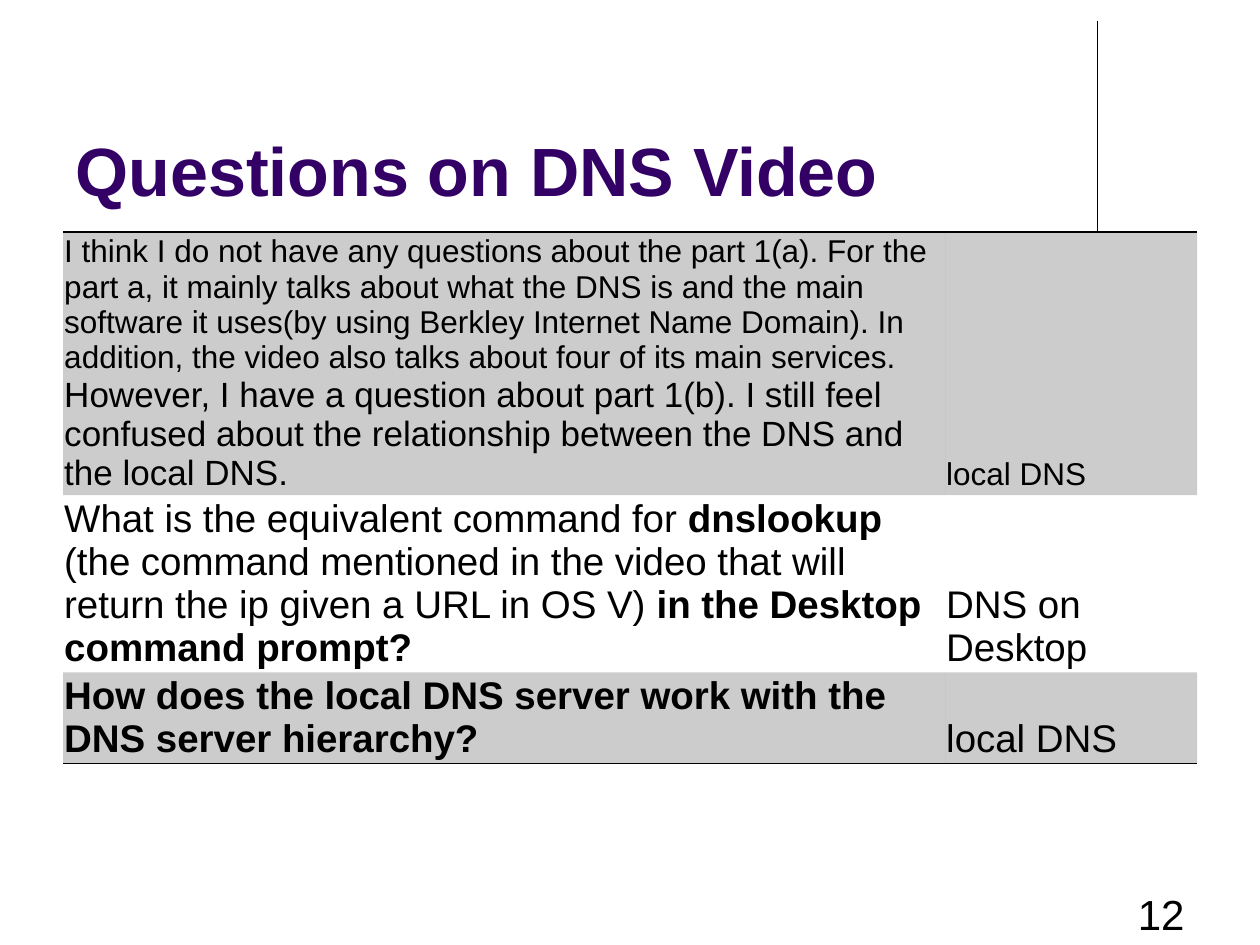
from pptx import Presentation
from pptx.dml.color import RGBColor
from pptx.enum.shapes import MSO_CONNECTOR
from pptx.enum.text import MSO_ANCHOR, PP_ALIGN
from pptx.oxml.ns import qn
from pptx.util import Inches, Pt
from lxml.etree import SubElement, Element

THEME = {
    "font": "Arial", "title": RGBColor(0x33, 0x00, 0x66), "ink": RGBColor(0, 0, 0),
    "title_size": 39, "number_size": 24, "small": 18, "medium": 20, "large": 22,
    "band_alpha": 20, "rule_width": 1,
}

TITLE = "Questions on DNS Video"
PAGE = "12"
# Each cell is a list of runs: (text, size, bold)
ROWS = [
    ([("I think I do not have any questions about the part 1(a). For the part a, it mainly "
       "talks about what the DNS is and the main software it uses(by using Berkley Internet "
       "Name Domain). In addition, the video also talks about four of its main services. ",
       "small", False),
      ("However, I have a question about part 1(b). I still feel confused about the "
       "relationship between the DNS and the local DNS.", "medium", False)],
     [("local DNS", "small", False)]),
    ([("What is the equivalent command for ", "large", False),
      ("dnslookup", "large", True),
      (" (the command mentioned in the video that will return the ip given a URL in OS V) ",
       "large", False),
      ("in the Desktop command prompt?", "large", True)],
     [("DNS on Desktop", "large", False)]),
    ([("How does the local DNS server work with the DNS server hierarchy?", "large", True)],
     [("local DNS", "large", False)]),
]
COL_WIDTHS = [7, 2]
ROW_HEIGHTS = [2.08, 1.4, 0.71]


def style(r, size, color="ink", bold=False):
    r.font.name = THEME["font"]
    r.font.size = Pt(THEME[size])
    r.font.bold = bold
    r.font.color.rgb = THEME[color]


def set_borders(cell, ruled):
    """Draw the edges named in ruled and clear the others."""
    tcPr = cell._tc.get_or_add_tcPr()
    for i, edge in enumerate(("lnL", "lnR", "lnT", "lnB")):
        ln = Element(qn(f"a:{edge}"), w=str(Pt(THEME["rule_width"])))
        if edge in ruled:
            fill = SubElement(ln, qn("a:solidFill"))
            SubElement(fill, qn("a:srgbClr"), val=str(THEME["ink"]))
        else:
            SubElement(ln, qn("a:noFill"))
        tcPr.insert(i, ln)


def fill_band(cell, banded):
    if not banded:
        cell.fill.background()
        return
    cell.fill.solid()
    cell.fill.fore_color.rgb = THEME["ink"]
    color = cell._tc.tcPr.find(".//" + qn("a:srgbClr"))
    SubElement(color, qn("a:alpha"), val=str(THEME["band_alpha"] * 1000))


def add_title(s):
    sp = s.shapes.title
    sp.left, sp.top, sp.width, sp.height = map(Inches, (0.5, 0.3, 8.25, 1.42))
    tf = sp.text_frame
    tf.text = TITLE
    tf.vertical_anchor = MSO_ANCHOR.BOTTOM
    tf.paragraphs[0].alignment = PP_ALIGN.LEFT
    style(tf.paragraphs[0].runs[0], "title_size", "title", True)


def add_rule(s):
    line = s.shapes.add_connector(MSO_CONNECTOR.STRAIGHT, Inches(8.71), Inches(0.17),
                                  Inches(8.71), Inches(1.83))
    line.line.color.rgb = THEME["ink"]
    line.line.width = Pt(0.75)
    SubElement(line._element.spPr, qn("a:effectLst"))


def add_questions(s):
    table = s.shapes.add_table(len(ROWS), len(COL_WIDTHS), Inches(0.5), Inches(1.84),
                               Inches(sum(COL_WIDTHS)), Inches(sum(ROW_HEIGHTS))).table
    table.first_row = table.horz_banding = False
    for col, width in zip(table.columns, COL_WIDTHS):
        col.width = Inches(width)
    last = len(ROWS) - 1
    for i, row in enumerate(ROWS):
        table.rows[i].height = Inches(ROW_HEIGHTS[i])
        ruled = {0: ["lnT"], last: ["lnB"]}.get(i, [])
        for j, runs in enumerate(row):
            cell = table.cell(i, j)
            cell.vertical_anchor = MSO_ANCHOR.BOTTOM
            cell.margin_left = cell.margin_right = Inches(0.01)
            cell.margin_top = cell.margin_bottom = Inches(0.02)
            fill_band(cell, i % 2 == 0)
            set_borders(cell, ruled)
            p = cell.text_frame.paragraphs[0]
            for text, size, bold in runs:
                r = p.add_run()
                r.text = text
                style(r, size, bold=bold)


def add_page_number(s):
    tf = s.shapes.add_textbox(Inches(7.17), Inches(7), Inches(2.33), Inches(0.5)).text_frame
    tf.word_wrap = True
    tf.text = PAGE
    p = tf.paragraphs[0]
    p.alignment = PP_ALIGN.RIGHT
    style(p.runs[0], "number_size")


def main():
    prs = Presentation()
    prs.slide_width, prs.slide_height = Inches(10), Inches(7.5)
    s = prs.slides.add_slide(prs.slide_layouts[5])
    add_rule(s)
    add_title(s)
    add_questions(s)
    add_page_number(s)
    prs.save("out.pptx")


if __name__ == "__main__":
    main()
